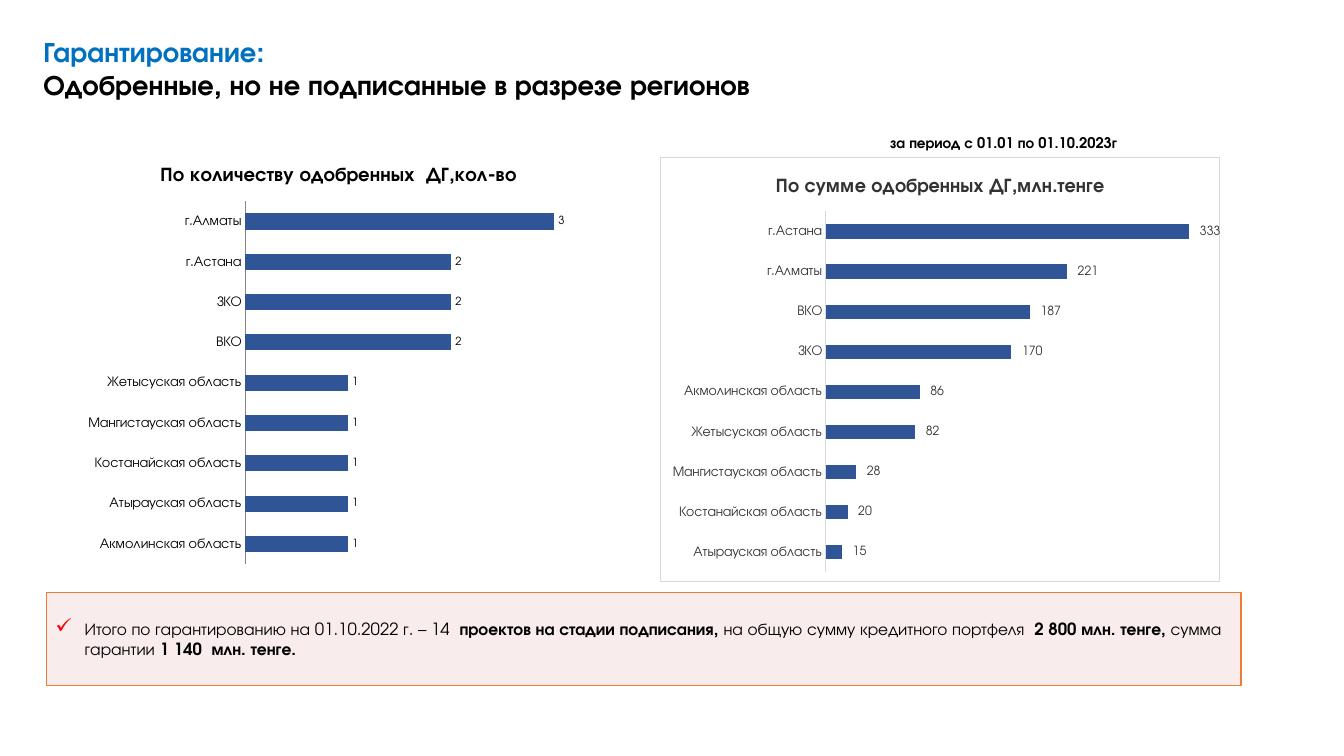
"""Build the slide on approved but unsigned guarantees by region."""
from dataclasses import dataclass
from typing import Optional

from lxml.etree import SubElement
from pptx import Presentation
from pptx.chart.data import CategoryChartData
from pptx.dml.color import RGBColor
from pptx.enum.chart import XL_CHART_TYPE, XL_LABEL_POSITION, XL_TICK_MARK
from pptx.enum.shapes import MSO_SHAPE
from pptx.enum.text import MSO_ANCHOR, MSO_AUTO_SIZE, PP_ALIGN
from pptx.oxml import parse_xml
from pptx.oxml.ns import nsdecls, qn
from pptx.util import Emu, Pt

EMU_PER_PX = 9144


@dataclass(frozen=True)
class Theme:
    font: str = "TeX Gyre Adventor"
    black: str = "000000"
    gray: str = "333333"
    axis: str = "868686"
    border: str = "D9D9D9"
    heading: str = "0070C0"
    bar: str = "2F5597"
    panel: str = "F2DCDB"
    outline: str = "ED7D31"
    check: str = "FF0000"
    white: str = "FFFFFF"
    title_size: float = 20
    chart_title_size: float = 14
    summary_size: float = 12
    period_size: float = 10.5
    category_size: float = 10


@dataclass(frozen=True)
class Box:
    left: int
    top: int
    width: int
    height: int

    def emu(self) -> tuple:
        return tuple(px(side) for side in (self.left, self.top, self.width, self.height))


@dataclass(frozen=True)
class RegionChart:
    title: str
    box: Box
    plot: tuple
    values: dict
    maximum: float
    gap: int
    label_size: float
    number_format: str
    color: str
    axis_color: str
    border: Optional[str] = None


THEME = Theme()
SUM_FORMAT = r'_-* #\ ##0_р_._-;\-* #\ ##0_р_._-;_-* "-"??_р_._-;_-@_-'

CHARTS = (
    RegionChart(
        "По количеству одобренных  ДГ,кол-во", Box(46, 146, 580, 431),
        (0.34, 0.125, 0.617, 0.835),
        {"Акмолинская область": 1, "Атырауская область": 1, "Костанайская область": 1,
         "Мангистауская область": 1, "Жетысуская область": 1, "ВКО": 2, "ЗКО": 2,
         "г.Астана": 2, "г.Алматы": 3},
        3.5, 150, 8, "#,##0", THEME.black, THEME.axis),
    RegionChart(
        "По сумме одобренных ДГ,млн.тенге", Box(655, 156, 569, 421),
        (0.295, 0.127, 0.684, 0.852),
        {"Атырауская область": 15, "Костанайская область": 20, "Мангистауская область": 28,
         "Жетысуская область": 82, "Акмолинская область": 86, "ЗКО": 170, "ВКО": 187,
         "г.Алматы": 221, "г.Астана": 333},
        350, 182, 9, SUM_FORMAT, THEME.gray, THEME.border, THEME.border),
)

SUMMARY = (
    ("Итого по гарантированию на 01.10.2022 г. – 14 ", False),
    (" проектов на стадии подписания, ", True),
    ("на общую сумму кредитного портфеля  ", False),
    ("2 800 млн. тенге, ", True),
    ("сумма гарантии", False),
    (" 1 140  млн. тенге.", True),
)


def px(length: int) -> Emu:
    return Emu(length * EMU_PER_PX)


def rgb(color: str) -> RGBColor:
    return RGBColor.from_string(color)


def style_font(font, size: float, color: str, bold: bool = False) -> None:
    font.name = THEME.font
    font.size = Pt(size)
    font.bold = bold
    font.color.rgb = rgb(color)


def add_text(paragraph, text: str, *, size: float, color: str = THEME.black,
             bold: bool = False) -> None:
    run = paragraph.add_run()
    run.text = text
    style_font(run.font, size, color, bold)


def fill_title(slide) -> None:
    title = slide.shapes.title
    title.left, title.top, title.width, title.height = Box(33, 29, 787, 111).emu()
    frame = title.text_frame
    frame.auto_size = MSO_AUTO_SIZE.NONE
    frame.vertical_anchor = MSO_ANCHOR.TOP
    paragraph = frame.paragraphs[0]
    paragraph.alignment = PP_ALIGN.LEFT
    add_text(paragraph, "Гарантирование:", size=THEME.title_size, color=THEME.heading, bold=True)
    paragraph.add_line_break()
    add_text(paragraph, "Одобренные, но не подписанные в разрезе регионов",
             size=THEME.title_size, bold=True)


def add_period(slide) -> None:
    frame = slide.shapes.add_textbox(*Box(873, 128, 258, 28).emu()).text_frame
    frame.word_wrap = False
    frame.auto_size = MSO_AUTO_SIZE.SHAPE_TO_FIT_TEXT
    add_text(frame.paragraphs[0], "за период с 01.01 по 01.10.2023г",
             size=THEME.period_size, bold=True)


def add_check_bullet(paragraph) -> None:
    properties = paragraph._p.get_or_add_pPr()
    properties.set("marL", str(px(30)))
    properties.set("indent", str(px(-29)))
    color = SubElement(properties, qn("a:buClr"))
    SubElement(color, qn("a:srgbClr"), val=THEME.check)
    SubElement(properties, qn("a:buSzPct"), val="125000")
    SubElement(properties, qn("a:buChar"), char="✓")


def add_summary(slide) -> None:
    shape = slide.shapes.add_shape(MSO_SHAPE.RECTANGLE, *Box(46, 588, 1185, 92).emu())
    shape.shadow.inherit = False
    shape.fill.solid()
    shape.fill.fore_color.rgb = rgb(THEME.panel)
    fill_color = shape._element.spPr.find(qn("a:solidFill")).find(qn("a:srgbClr"))
    SubElement(fill_color, qn("a:alpha"), val="50000")
    shape.line.color.rgb = rgb(THEME.outline)
    shape.line.width = Pt(1)
    frame = shape.text_frame
    frame.word_wrap = True
    frame.vertical_anchor = MSO_ANCHOR.MIDDLE
    frame.margin_left = frame.margin_right = px(8)
    frame.margin_top = frame.margin_bottom = px(4)
    paragraph = frame.paragraphs[0]
    add_check_bullet(paragraph)
    paragraph.alignment = PP_ALIGN.LEFT
    paragraph.space_after = Pt(6)
    for text, bold in SUMMARY:
        add_text(paragraph, text, size=THEME.summary_size, bold=bold)


def place_plot(chart, plot: tuple) -> None:
    area = chart._chartSpace.chart.plotArea
    for layout in area.findall(qn("c:layout")):
        area.remove(layout)
    sides = "".join(f'<c:{name} val="{value}"/>' for name, value in zip("xywh", plot))
    area.insert(0, parse_xml(
        f'<c:layout {nsdecls("c")}><c:manualLayout><c:layoutTarget val="inner"/>'
        f'<c:xMode val="edge"/><c:yMode val="edge"/>{sides}</c:manualLayout></c:layout>'))


def frame_chart(chart, border: str) -> None:
    chart._chartSpace.chart.addnext(parse_xml(
        f'<c:spPr {nsdecls("c", "a")}><a:solidFill><a:srgbClr val="{THEME.white}"/></a:solidFill>'
        f'<a:ln w="{Pt(0.75)}"><a:solidFill><a:srgbClr val="{border}"/></a:solidFill></a:ln></c:spPr>'))


def add_region_chart(slide, region: RegionChart) -> None:
    data = CategoryChartData()
    data.categories = list(region.values)
    data.add_series("Series 1", list(region.values.values()))
    chart = slide.shapes.add_chart(XL_CHART_TYPE.BAR_CLUSTERED, *region.box.emu(), data).chart
    style_font(chart.font, THEME.category_size, region.color)
    chart.has_legend = False
    chart.has_title = True
    add_text(chart.chart_title.text_frame.paragraphs[0], region.title,
             size=THEME.chart_title_size, color=region.color, bold=True)
    category_axis, value_axis = chart.category_axis, chart.value_axis
    category_axis.major_tick_mark = XL_TICK_MARK.NONE
    category_axis.format.line.color.rgb = rgb(region.axis_color)
    category_axis.format.line.width = Pt(0.75)
    style_font(category_axis.tick_labels.font, THEME.category_size, region.color)
    value_axis.visible = False
    value_axis.has_major_gridlines = False
    value_axis.minimum_scale, value_axis.maximum_scale = 0, region.maximum
    plot = chart.plots[0]
    plot.gap_width = region.gap
    plot.vary_by_categories = False
    series = plot.series[0]
    series.format.fill.solid()
    series.format.fill.fore_color.rgb = rgb(THEME.bar)
    labels = series.data_labels
    labels.show_value = True
    labels.number_format = region.number_format
    labels.number_format_is_linked = False
    labels.position = XL_LABEL_POSITION.OUTSIDE_END
    style_font(labels.font, region.label_size, region.color)
    place_plot(chart, region.plot)
    if region.border:
        frame_chart(chart, region.border)


def main() -> None:
    presentation = Presentation()
    presentation.slide_width, presentation.slide_height = px(1333), px(750)
    slide = presentation.slides.add_slide(presentation.slide_layouts[5])
    fill_title(slide)
    add_period(slide)
    add_summary(slide)
    for region in CHARTS:
        add_region_chart(slide, region)
    presentation.save("out.pptx")


if __name__ == "__main__":
    main()
